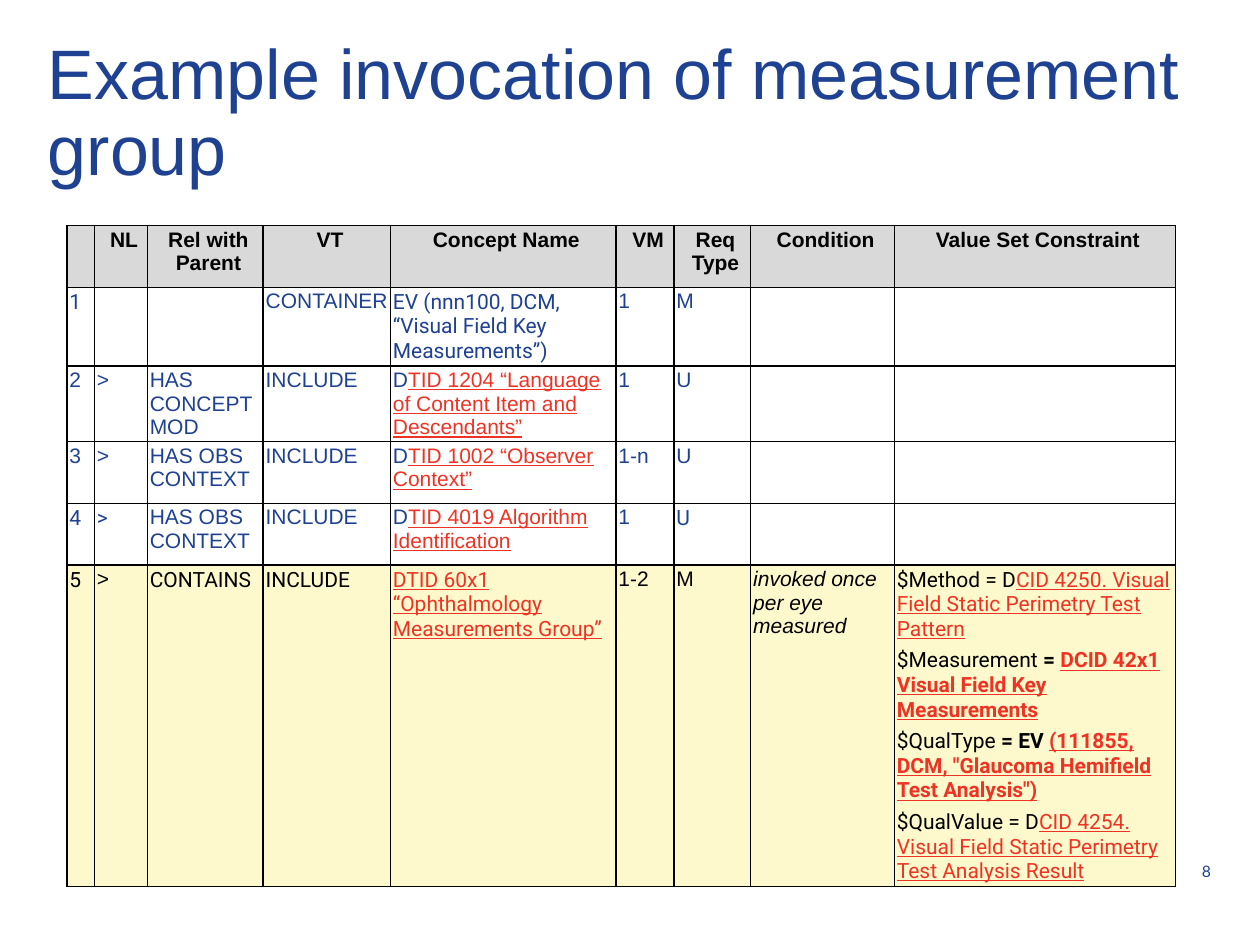
from pptx import Presentation
from pptx.util import Inches, Pt
from pptx.dml.color import RGBColor as RGB
from pptx.enum.text import PP_ALIGN as AL, MSO_ANCHOR as AN, MSO_AUTO_SIZE as FIT
from lxml.etree import SubElement as Sub
from pptx.oxml.ns import qn

HUES = {"blue": "1E4191", "red": "EE3324", "ink": "000000", "head": "D9D9D9", "pale": "FDF9CC"}


def put(para, text, font="Arial", size=12, hue="blue", bold=False, ital=False, under=False):
    run = para.add_run()
    run.text = text
    face = run.font
    face.name, face.size = font, Pt(size)
    face.bold, face.italic, face.underline = bold, ital, under
    face.color.rgb = RGB.from_string(HUES[hue])


def edge(cell):
    props = cell._tc.get_or_add_tcPr()
    for side in ("a:lnL", "a:lnR", "a:lnT", "a:lnB"):
        line = Sub(props, qn(side), w=str(Pt(1)))
        Sub(Sub(line, qn("a:solidFill")), qn("a:srgbClr"), val=HUES["ink"])


deck = Presentation()
deck.slide_width, deck.slide_height = Inches(10), Inches(7.5)
slide = deck.slides.add_slide(deck.slide_layouts[5])

title = slide.shapes.title
title.left, title.top, title.width, title.height = map(Inches, (0.38, 0.31, 9.25, 1.09))
frame = title.text_frame
frame.margin_left = frame.margin_right = frame.margin_top = frame.margin_bottom = 0
frame.word_wrap, frame.auto_size, frame.vertical_anchor = True, FIT.NONE, AN.TOP
para = frame.paragraphs[0]
para.alignment, para.line_spacing = AL.LEFT, 0.9
put(para, "Example invocation of measurement group", size=40)

ROB = {"font": "Roboto"}
LINK = {"hue": "red", "under": True}
BOLD = {"bold": True}
heads = ["", "NL", "Rel with Parent", "VT", "Concept Name", "VM", "Req Type", "Condition",
         "Value Set Constraint"]
sets = [
    [("$Method = D", {}), ("CID 4250. Visual Field Static Perimetry Test Pattern", LINK)],
    [("$Measurement ", {}), ("= ", BOLD),
     ("DCID 42x1 Visual Field Key Measurements", LINK | BOLD)],
    [("$QualType ", {}), ("= EV ", BOLD),
     ('(111855, DCM, "Glaucoma Hemifield Test Analysis")', LINK | BOLD)],
    [("$QualValue = D", {}),
     ("CID 4254. Visual Field Static Perimetry Test Analysis Result", LINK)],
]
body = [
    ["1", "", "", "CONTAINER", "EV (nnn100, DCM, “Visual Field Key Measurements”)", "1", "M", "", ""],
    ["2", ">", "HAS CONCEPT MOD", "INCLUDE",
     [[("D", {}), ("TID 1204 “Language of Content Item and Descendants”", LINK)]], "1", "U", "", ""],
    ["3", ">", "HAS OBS CONTEXT", "INCLUDE",
     [[("D", {}), ("TID 1002 “Observer Context”", LINK)]], "1-n", "U", "", ""],
    ["4", ">", "HAS OBS CONTEXT", "INCLUDE",
     [[("D", {}), ("TID 4019 Algorithm Identification", LINK)]], "1", "U", "", ""],
    ["5", ">", "CONTAINS", "INCLUDE",
     [[("DTID 60x1 “Ophthalmology Measurements Group”", LINK)]], "1-2", "M",
     [[("invoked once per eye measured", {"ital": True})]], sets],
]
robs = {1: (0, 4), 4: (0, 1, 6), 5: (0, 2, 3, 4, 8)}
looks = {0: {"hue": "ink", "bold": True}, 5: {"hue": "ink"}}
fills = {0: "head", 5: "pale"}
cols = [0.22, 0.42, 0.92, 1.01, 1.79, 0.46, 0.61, 1.14, 2.23]
rows = [0.49, 0.62, 0.6, 0.49, 0.49, 2.55]

grid = slide.shapes.add_table(len(rows), len(cols), Inches(0.53), Inches(1.79),
                              Inches(sum(cols)), Inches(sum(rows))).table
grid.horz_banding = False
for col, wide in zip(grid.columns, cols):
    col.width = Inches(wide)
for row, high in zip(grid.rows, rows):
    row.height = Inches(high)

for r, line in enumerate([heads] + body):
    for c, item in enumerate(line):
        cell = grid.cell(r, c)
        cell.margin_left = cell.margin_right = cell.margin_top = cell.margin_bottom = Inches(0.02)
        edge(cell)
        if r in fills:
            cell.fill.solid()
            cell.fill.fore_color.rgb = RGB.from_string(HUES[fills[r]])
        else:
            cell.fill.background()
        if not item:
            continue
        base = looks.get(r, {}) | (ROB if c in robs.get(r, ()) else {})
        parts = [[(item, {})]] if isinstance(item, str) else item
        for n, runs in enumerate(parts):
            para = cell.text_frame.add_paragraph() if n else cell.text_frame.paragraphs[0]
            if n:
                para.space_before = Pt(4)
            if r == 0:
                para.alignment = AL.CENTER
                para._p.get_or_add_pPr().set("marL", str(Inches(0.05)))
            for text, style in runs:
                put(para, text, **(base | style))

page = slide.shapes.add_textbox(*map(Inches, (7.05, 6.81, 2.66, 0.24))).text_frame
page.word_wrap = True
para = page.paragraphs[0]
para.alignment, para.line_spacing = AL.RIGHT, 0.9
put(para, "8", font="Lato", size=9)

deck.save("out.pptx")
